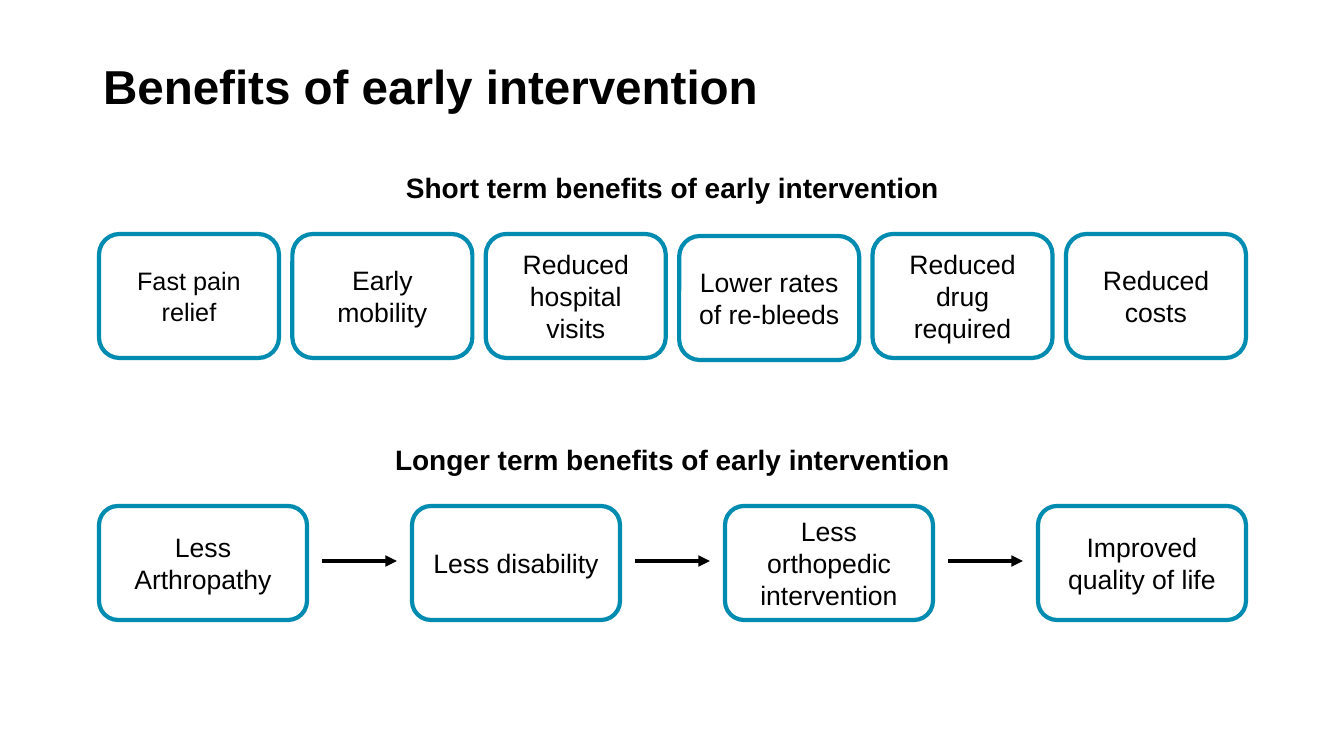
from pptx import Presentation
from pptx import util as u
from pptx.dml.color import RGBColor
from pptx.enum import shapes, text
from pptx.oxml import ns, xmlchemy

COLOURS = {"paper": "FFFFFF", "ink": "000000", "border": "008BB0"}
PX = 914400 / 100.8  # EMU in one px
LEFT, SPAN = 99, 1147  # both rows share these edges


def px(length):
    return u.Emu(round(length * PX))


def colour(name):
    return RGBColor.from_string(COLOURS[name])


class Slide:
    """Holds the style and the page being filled."""

    def __init__(self, page, font="Arial"):
        self.page = page
        self.font = font

    def label(self, shape, words, size, bold=False, align=text.PP_ALIGN.CENTER,
              anchor=text.MSO_ANCHOR.MIDDLE):
        frame = shape.text_frame
        frame.text = words
        frame_format = {"word_wrap": True, "auto_size": text.MSO_AUTO_SIZE.NONE,
                        "vertical_anchor": anchor}
        for name, value in frame_format.items():
            setattr(frame, name, value)
        para = frame.paragraphs[0]
        para.alignment = align
        font = para.runs[0].font
        for name, value in {"name": self.font, "size": u.Pt(size), "bold": bold}.items():
            setattr(font, name, value)
        font.color.rgb = colour("ink")

    def title(self, words, left, top, width, height):
        title = self.page.shapes.title
        place = {"left": left, "top": top, "width": width, "height": height}
        for name, value in place.items():
            setattr(title, name, px(value))
        self.label(title, words, 34, bold=True, align=text.PP_ALIGN.LEFT)

    def panel(self, kind, left, top, width, height):
        shape = self.page.shapes.add_shape(kind, *map(px, (left, top, width, height)))
        shape.shadow.inherit = False
        shape.fill.solid()
        shape.fill.fore_color.rgb = colour("paper")
        return shape

    def heading(self, words, top):
        band = self.panel(shapes.MSO_SHAPE.RECTANGLE, LEFT, top, SPAN, 44)
        band.line.fill.background()
        self.label(band, words, 20, bold=True, anchor=text.MSO_ANCHOR.TOP)

    def box(self, words, left, top, width, height, size=19):
        box = self.panel(shapes.MSO_SHAPE.ROUNDED_RECTANGLE, left, top, width, height)
        box.line.color.rgb = colour("border")
        box.line.width = u.Pt(3)
        self.label(box, words, size)

    def arrow(self, start, end, y):
        arrow = self.page.shapes.add_connector(
            shapes.MSO_CONNECTOR.STRAIGHT, *map(px, (start, y, end, y)))
        arrow.line.color.rgb = colour("ink")
        arrow.line.width = u.Pt(2.75)
        properties = arrow._element.find(ns.qn("p:spPr"))
        head = xmlchemy.OxmlElement("a:tailEnd")
        head.set("type", "triangle")
        properties.find(ns.qn("a:ln")).append(head)
        properties.append(xmlchemy.OxmlElement("a:effectLst"))


def main():
    deck = Presentation()
    deck.slide_width, deck.slide_height = px(1344), px(756)
    slide = Slide(deck.slides.add_slide(deck.slide_layouts[5]))
    slide.title("Benefits of early intervention", 93, 25, 1159, 120)

    # Short term benefits: (words, text size, shift down)
    short_term = [
        ("Fast pain relief", 18, 0),
        ("Early mobility", 19, 0),
        ("Reduced hospital visits", 19, 0),
        ("Lower rates of re-bleeds", 19, 2),
        ("Reduced drug required", 19, 0),
        ("Reduced costs", 19, 0),
    ]
    slide.heading("Short term benefits of early intervention", 166)
    width = 180
    pitch = (SPAN - width) / (len(short_term) - 1)
    for i, (words, size, shift) in enumerate(short_term):
        slide.box(words, LEFT + i * pitch, 234 + shift, width, 124, size)

    # Longer term benefits: a chain of boxes joined by arrows
    longer_term = ["Less Arthropathy", "Less disability",
                   "Less orthopedic intervention", "Improved quality of life"]
    slide.heading("Longer term benefits of early intervention", 438)
    width, gap = 208, 15
    pitch = (SPAN - width) / (len(longer_term) - 1)
    for i, words in enumerate(longer_term):
        left = LEFT + i * pitch
        slide.box(words, left, 506, width, 114)
        if i < len(longer_term) - 1:
            slide.arrow(left + width + gap, left + pitch - gap, 561)

    deck.save("out.pptx")


if __name__ == "__main__":
    main()
